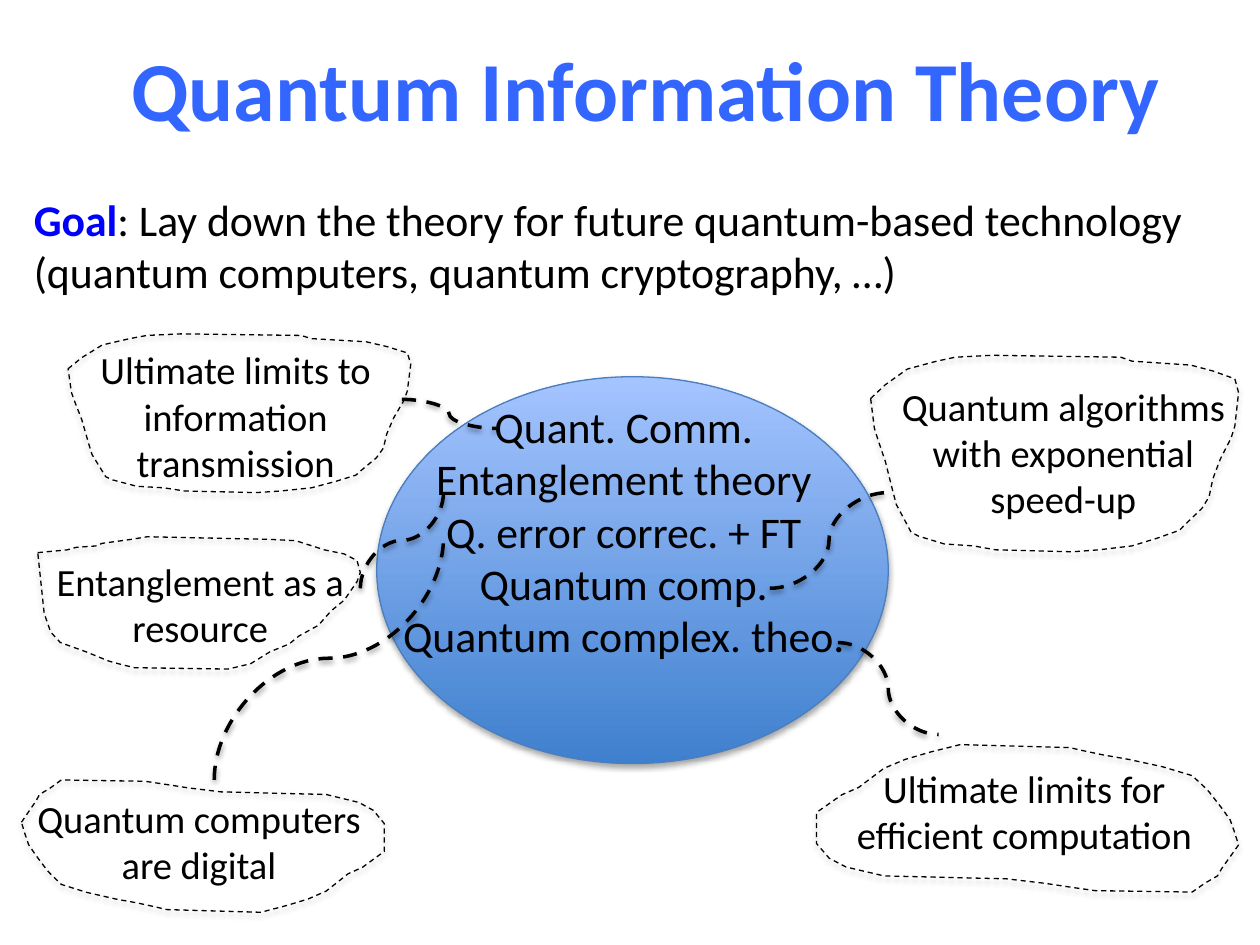
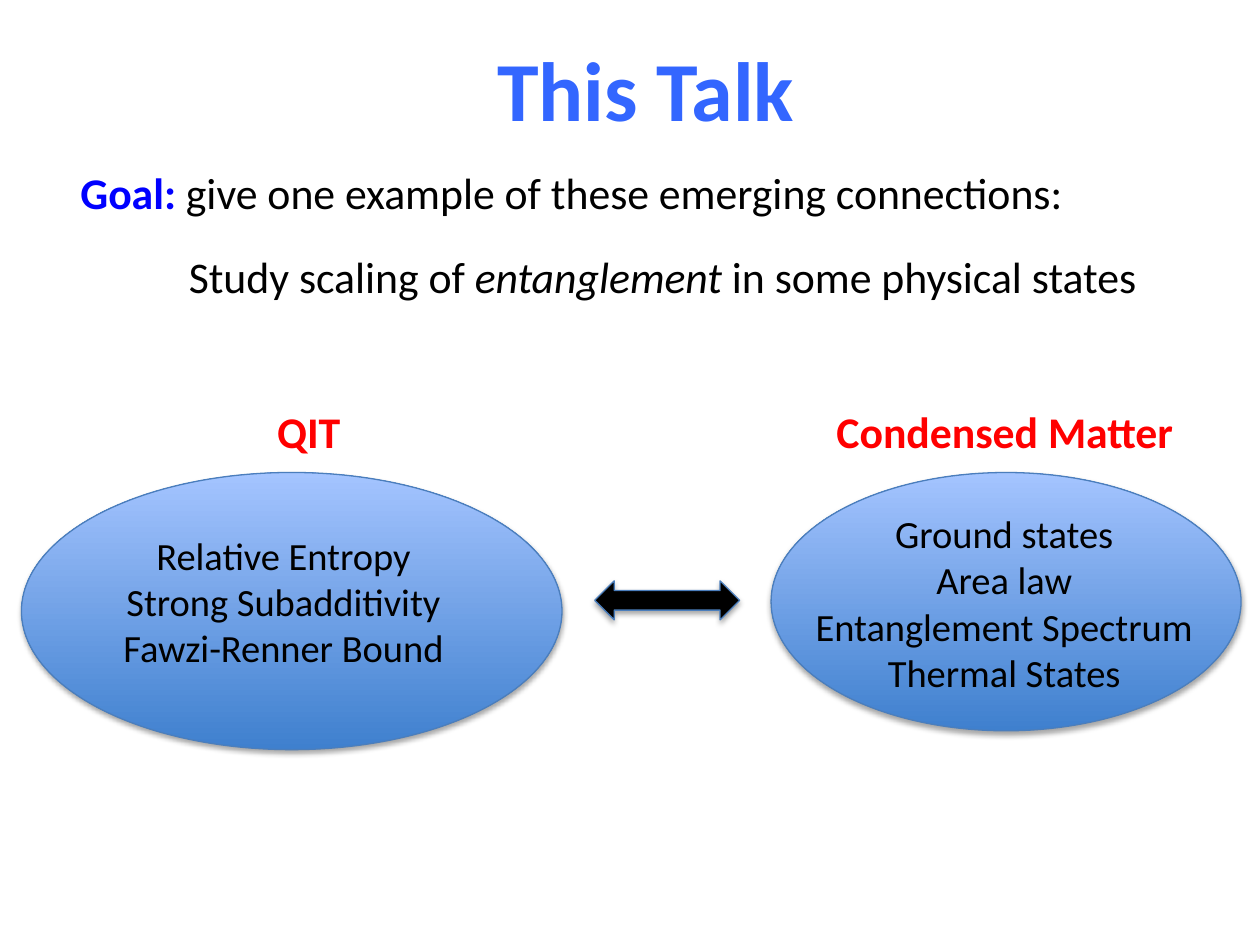
from pptx import Presentation
from pptx import util as u
from pptx.dml.color import RGBColor
from pptx.enum import dml, shapes, text
from pptx.oxml import parse_xml
from pptx.oxml.ns import nsdecls

# Shared style
FONT = "Calibri"
TITLE_BLUE = RGBColor(0x33, 0x66, 0xFF)
GOAL_BLUE = RGBColor(0x00, 0x00, 0xFF)
HEADING_RED = RGBColor(0xFF, 0x00, 0x00)
BLACK = RGBColor(0x00, 0x00, 0x00)
EDGE_BLUE = RGBColor(0x4B, 0x7E, 0xBC)
DEEP_BLUE = RGBColor(0x3F, 0x80, 0xCE)
PALE_BLUE = RGBColor(0xA4, 0xC4, 0xFF)
TITLE_SIZE, BODY_SIZE, NOTE_SIZE = 48, 25, 22
CENTER, LEFT = text.PP_ALIGN.CENTER, text.PP_ALIGN.LEFT

# The grid: 100 columns by 75 rows
COLUMNS, ROWS = 100, 75
WIDTH, HEIGHT = u.Inches(10), u.Inches(7.5)

# Hand-drawn outlines, in percent of their frame
BOWL = [
    (0, 22), (4, 15), (7, 11), (10, 7), (12, 6), (18, 3), (23, 1), (33, 0),
    (68, 1), (71, 3), (87, 5), (93, 8), (99, 12), (100, 19), (99, 36),
    (98, 42), (95, 53), (93, 63), (92, 72), (90, 78), (85, 87), (84, 89),
    (78, 93), (71, 97), (62, 99), (55, 100), (34, 99), (28, 97), (20, 96),
    (13, 92), (11, 90), (9, 83), (7, 76), (6, 69), (4, 54), (2, 43), (1, 37)]
PEBBLE = [
    (0, 32), (4, 16), (5, 11), (8, 6), (11, 0), (34, 1), (39, 3), (46, 6),
    (55, 9), (84, 11), (93, 17), (97, 23), (99.5, 33), (100, 42), (99.5, 54),
    (97, 60), (94, 66), (90, 71), (84, 84), (79, 90), (73, 95), (66, 100),
    (40, 98), (37, 96), (32, 93), (26, 90), (18, 85), (11, 79), (8, 71),
    (7, 68), (4, 57), (2, 49), (1, 41)]
WEDGE = [
    (0, 12), (9, 10), (12, 8), (18, 7), (20, 5), (29, 2), (34, 0), (72, 2),
    (80, 3), (89, 10), (95, 13), (99, 18), (100, 27), (99, 34), (95, 48),
    (91, 56), (87, 67), (81, 75), (78, 81), (72, 87), (66, 96), (59, 100),
    (30, 99), (25, 96), (22, 94), (15, 87), (7, 80), (4, 72), (2, 58)]


def col(count):
    return round(WIDTH * count / COLUMNS)


def row(count):
    return round(HEIGHT * count / ROWS)


def frame(left, top, width, height):
    return col(left), row(top), col(width), row(height)


class Deck:
    """Holds the presentation, its style and the current slide."""

    def __init__(self):
        self.presentation = Presentation()
        self.presentation.slide_width = WIDTH
        self.presentation.slide_height = HEIGHT
        self.slide = None

    def new_slide(self, title):
        layout = self.presentation.slide_layouts[6]
        self.slide = self.presentation.slides.add_slide(layout)
        self.text((1.7, -2.6, 99.1, 19.1), [[(title, TITLE_BLUE, True)]],
                  TITLE_SIZE, CENTER, text.MSO_ANCHOR.MIDDLE)

    def text(self, box, lines, size, align=CENTER, anchor=text.MSO_ANCHOR.TOP):
        """Each line is a string or a list of (words, colour, bold, italic)."""
        text_frame = self.slide.shapes.add_textbox(*frame(*box)).text_frame
        text_frame.word_wrap = True
        text_frame.vertical_anchor = anchor
        for number, line in enumerate(lines):
            paragraph = (text_frame.add_paragraph() if number
                         else text_frame.paragraphs[0])
            paragraph.alignment = align
            for part in [(line,)] if isinstance(line, str) else line:
                self.run(paragraph, size, *part)
        return text_frame

    def run(self, paragraph, size, words, color=BLACK, bold=False, italic=False):
        run = paragraph.add_run()
        run.text = words
        font = run.font
        font.name, font.size = FONT, u.Pt(size)
        font.bold, font.italic = bold, italic
        font.color.rgb = color

    def shadow(self, shape, opacity=35, distance=1.8):
        shape._element.spPr.append(parse_xml(
            f'<a:effectLst {nsdecls("a")}><a:outerShdw blurRad="{u.Pt(3.15)}" '
            f'dist="{u.Pt(distance)}" dir="5400000" rotWithShape="0">'
            f'<a:srgbClr val="000000"><a:alpha val="{opacity * 1000}"/>'
            '</a:srgbClr></a:outerShdw></a:effectLst>'))

    def outline(self, shape, color, width, dashed=False):
        shape.line.color.rgb = color
        shape.line.width = u.Pt(width)
        if dashed:
            shape.line.dash_style = dml.MSO_LINE.DASH

    def ellipse(self, *box):
        shape = self.slide.shapes.add_shape(shapes.MSO_SHAPE.OVAL, *frame(*box))
        shape.fill.gradient()
        shape.fill.gradient_angle = 90
        for stop, color in zip(shape.fill.gradient_stops, (DEEP_BLUE, PALE_BLUE)):
            stop.color.rgb = color
        self.outline(shape, EDGE_BLUE, 0.75)
        self.shadow(shape)

    def double_arrow(self, *box):
        shape = self.slide.shapes.add_shape(
            shapes.MSO_SHAPE.LEFT_RIGHT_ARROW, *frame(*box))
        shape.fill.solid()
        shape.fill.fore_color.rgb = BLACK
        self.outline(shape, EDGE_BLUE, 0.75)
        self.shadow(shape)

    def cloud(self, points, box, rotation=0):
        left, top, width, height = frame(*box)
        builder = self.slide.shapes.build_freeform(
            *points[0], scale=(width / 100, height / 100))
        builder.add_line_segments(points[1:], close=True)
        shape = builder.convert_to_shape(left, top)
        shape.rotation = rotation
        shape.fill.background()
        self.outline(shape, BLACK, 0.75, dashed=True)
        self.shadow(shape)

    def curve(self, start, end, upright=False):
        """Dashed S-curve; an upright one leaves and arrives vertically."""
        (x1, y1), (x2, y2) = start, end
        if upright:  # lay the rising curve on its side, then turn it
            middle_x, middle_y = (x1 + x2) / 2, (y1 + y2) / 2
            half_width, half_height = (y1 - y2) / 2, (x2 - x1) / 2
            x1, x2 = middle_x + half_width, middle_x - half_width
            y1, y2 = middle_y + half_height, middle_y - half_height
        connector = self.slide.shapes.add_connector(
            shapes.MSO_CONNECTOR.CURVE, col(x1), row(y1), col(x2), row(y2))
        if upright:
            connector._element.spPr.xfrm.set("rot", "5400000")
        self.outline(connector, BLACK, 2, dashed=True)
        self.shadow(connector, 38, 1.6)


def theory_slide(deck):
    deck.new_slide("Quantum Information Theory")
    deck.text((1.7, 14.8, 94.6, 9.4), [
        [("Goal", GOAL_BLUE, True),
         (": Lay down the theory for future quantum-based technology",)],
        "(quantum computers, quantum cryptography, …)"], BODY_SIZE, LEFT)

    # Central field of topics
    deck.ellipse(29.9, 29.9, 40.6, 30.7)
    deck.text((29.9, 31.2, 39.2, 22), [
        "Quant. Comm.", "Entanglement theory", "Q. error correc. + FT",
        "Quantum comp.", "Quantum complex. theo."], BODY_SIZE)

    # Insights around it: words, text corner, outline, outline frame, rotation
    insights = [
        ("Entanglement as a resource", (0.6, 43.8),
         WEDGE, (3, 42.6, 25.6, 10.5), 0),
        ("Ultimate limits to information transmission", (3.4, 27),
         BOWL, (5.4, 26.5, 27.2, 12.6), 0),
        ("Quantum computers are digital", (0.5, 62.6),
         PEBBLE, (1.7, 61.9, 28.8, 10.5), 0),
        ("Quantum algorithms with exponential speed-up", (69.1, 29.9),
         BOWL, (69.1, 28.2, 29.2, 15.6), 0),
        ("Ultimate limits for efficient computation", (66, 60.2),
         PEBBLE, (64.8, 59.1, 33.5, 11.7), 180),
    ]
    for words, corner, points, box, rotation in insights:
        deck.text((*corner, 30.6, 12.1), [words], NOTE_SIZE)
        deck.cloud(points, box, rotation)

    # Links from topics to insights
    deck.curve((31.9, 31.7), (39.4, 34))
    deck.curve((28.6, 46.7), (35.2, 39.1), upright=True)
    deck.curve((17, 61.9), (35.2, 42.6), upright=True)
    deck.curve((61.1, 46.7), (70.5, 39.1))
    deck.curve((66.5, 51), (74.5, 58.3))


def talk_slide(deck):
    deck.new_slide("This Talk")
    goal = deck.text((5.4, 12.7, 93.1, 26.3), [
        [("Goal: ", GOAL_BLUE, True),
         ("give one example of these emerging connections:",)],
        [("Study scaling of ",), ("entanglement", BLACK, False, True),
         (" in some physical states",)]], BODY_SIZE, LEFT)
    study = goal.paragraphs[1]
    study.space_before = u.Pt(18)
    study._p.get_or_add_pPr().set("marL", str(col(8.6)))

    # The two fields and the arrow between them
    deck.ellipse(61.2, 37.5, 37.3, 20.5)
    deck.ellipse(1.7, 37.5, 42.9, 22)
    deck.double_arrow(47.2, 46.1, 11.5, 3.1)
    deck.text((15.4, 31.6, 18.2, 5.2), [[("QIT", HEADING_RED, True)]], BODY_SIZE)
    deck.text((65.4, 31.6, 38.8, 5.2),
              [[("Condensed Matter", HEADING_RED, True)]], BODY_SIZE, LEFT)
    deck.text((61.2, 40, 37, 19.5), [
        "Ground states", "Area law", "Entanglement Spectrum",
        "Thermal States"], NOTE_SIZE)
    deck.text((5.4, 41.7, 34.2, 12.1), [
        "Relative Entropy", "Strong Subadditivity", "Fawzi-Renner Bound"],
        NOTE_SIZE)


def main():
    deck = Deck()
    theory_slide(deck)
    talk_slide(deck)
    deck.presentation.save("out.pptx")


if __name__ == "__main__":
    main()
